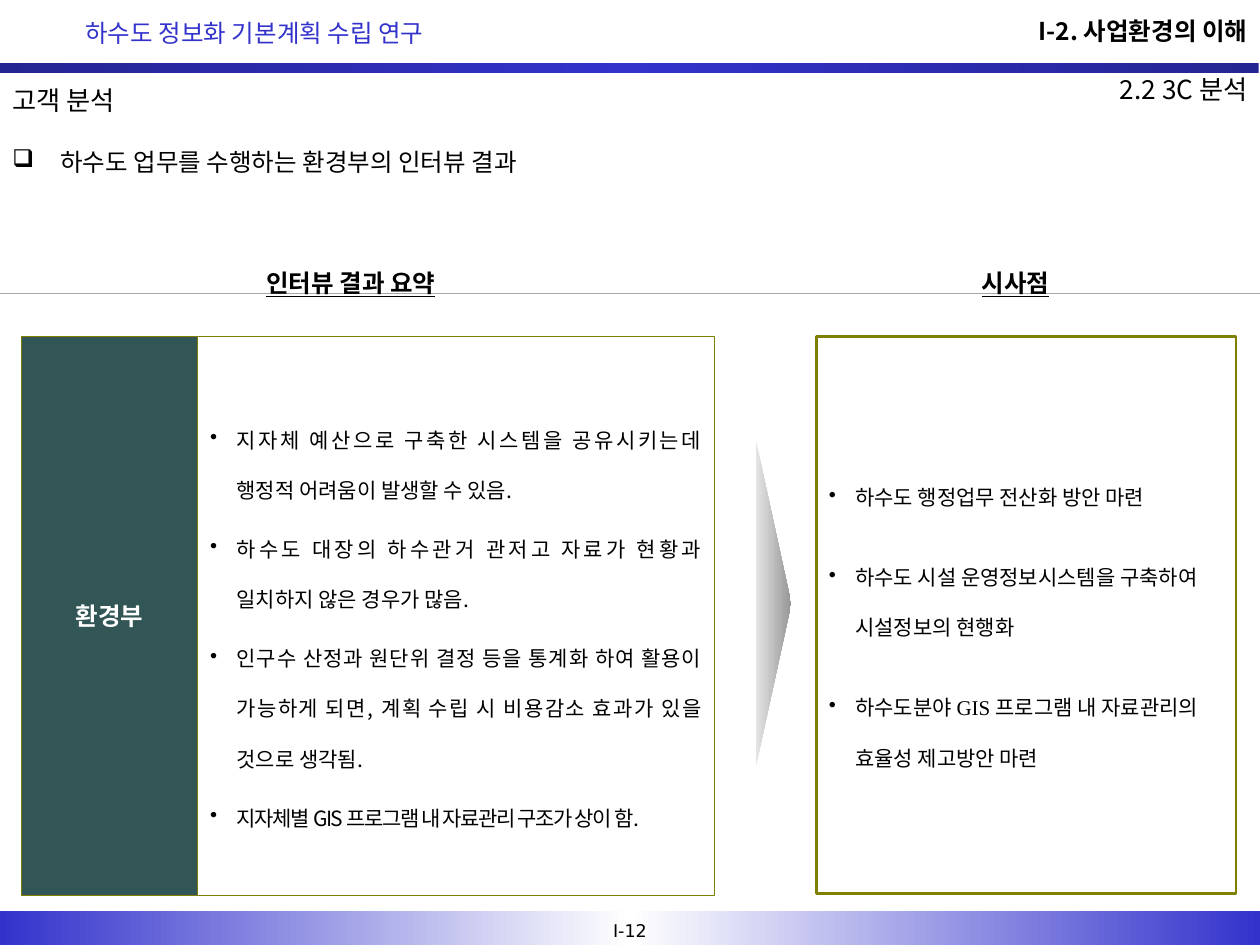
"""Builds the interview summary slide of a sewerage planning study."""
from dataclasses import dataclass
from typing import Any, NamedTuple, Optional

from lxml.etree import SubElement
from pptx import Presentation
from pptx.dml.color import RGBColor
from pptx.enum.dml import MSO_LINE
from pptx.enum.shapes import MSO_CONNECTOR, MSO_SHAPE as SHAPE
from pptx.enum.text import MSO_ANCHOR as ANCHOR, MSO_AUTO_SIZE, PP_ALIGN as ALIGN
from pptx.oxml.ns import qn
from pptx.util import Inches, Pt

COLORS = {"black": "000000", "white": "FFFFFF", "blue": "3333CC", "navy": "242492",
          "olive": "808000", "teal": "325656", "rule": "A6A6A6",
          "silver": "E5E5E5", "gray": "969696"}
KR, LATIN, SERIF = "Noto Sans CJK KR", "DejaVu Sans", "Times New Roman"
WIDTH, HEIGHT = Inches(10), Inches(7.5)
COLS, ROWS = 100, 75


class Area(NamedTuple):
    """A rectangle in columns and rows of the slide grid."""
    col: float
    row: float
    cols: float
    rows: float

    def emu(self) -> tuple:
        """Return left, top, width and height in slide units."""
        return tuple(round(v * side / n) for v, side, n in
                     zip(self, (WIDTH, HEIGHT) * 2, (COLS, ROWS) * 2))


@dataclass
class Style:
    """The format shared by all paragraphs of a text."""
    size: float = 14
    color: str = "black"
    font: str = KR
    bold: bool = False
    underline: bool = False
    align: Any = ALIGN.LEFT
    anchor: Any = ANCHOR.MIDDLE
    wrap: bool = True
    bullet: Optional[str] = None
    indent: float = 0
    line: float = 1.0
    gap: float = 0


@dataclass
class Label:
    """A text box with one paragraph."""
    area: Area
    text: str
    style: Style


@dataclass
class Panel:
    """A framed rectangle with paragraphs."""
    area: Area
    texts: list
    style: Style
    fill: str = "white"
    weight: float = 0.75


@dataclass
class Blend:
    """A shape filled with evenly spaced gradient colours."""
    area: Area
    colors: list
    shape: Any = SHAPE.RECTANGLE
    rotation: float = 0


def rgb(name: str) -> RGBColor:
    """Look up a named colour."""
    return RGBColor.from_string(COLORS[name])


def assign(target: Any, **values: Any) -> None:
    """Set attributes from format values."""
    for name, value in values.items():
        setattr(target, name, value)


def write(tf: Any, texts: list, style: Style) -> None:
    """Fill a text frame with styled paragraphs."""
    assign(tf, word_wrap=style.wrap, auto_size=MSO_AUTO_SIZE.NONE,
           vertical_anchor=style.anchor)
    last = len(texts) - 1
    for i, text in enumerate(texts):
        p = tf.add_paragraph() if i else tf.paragraphs[0]
        if style.bullet:
            pPr = p._p.get_or_add_pPr()
            pPr.set("marL", str(Inches(style.indent)))
            pPr.set("indent", str(-Inches(style.indent)))
            SubElement(pPr, qn("a:buChar"), char=style.bullet)
        assign(p, alignment=style.align, line_spacing=style.line,
               space_before=Pt(style.gap if i else 0),
               space_after=Pt(style.gap if i < last else 0))
        r = p.add_run()
        r.text = text
        assign(r.font, size=Pt(style.size), bold=style.bold,
               underline=style.underline, name=style.font)
        r.font.color.rgb = rgb(style.color)
        SubElement(r._r.get_or_add_rPr(), qn("a:ea"), typeface=KR)


def add_label(s: Any, label: Label) -> None:
    """Draw a text box."""
    write(s.shapes.add_textbox(*label.area.emu()).text_frame, [label.text], label.style)


def add_panel(s: Any, panel: Panel) -> Any:
    """Draw a framed panel and return it."""
    sp = s.shapes.add_shape(SHAPE.RECTANGLE, *panel.area.emu())
    sp.shadow.inherit = False
    sp.fill.solid()
    sp.fill.fore_color.rgb = rgb(panel.fill)
    sp.line.color.rgb = rgb("olive")
    sp.line.width = Pt(panel.weight)
    write(sp.text_frame, panel.texts, panel.style)
    return sp


def add_blend(s: Any, blend: Blend) -> None:
    """Draw a shape with a horizontal gradient."""
    sp = s.shapes.add_shape(blend.shape, *blend.area.emu())
    sp.shadow.inherit = False
    sp.rotation = blend.rotation
    sp.line.fill.background()
    sp.fill.gradient()
    sp.fill.gradient_angle = 0
    grad = sp._element.spPr.find(qn("a:gradFill"))
    grad.set("rotWithShape", "0")
    stops = grad.find(qn("a:gsLst"))
    stops[:] = []
    for i, name in enumerate(blend.colors):
        gs = SubElement(stops, qn("a:gs"), pos=str(100000 * i // (len(blend.colors) - 1)))
        SubElement(gs, qn("a:srgbClr"), val=COLORS[name])


def add_rule(s: Any, row: float) -> None:
    """Draw a dotted rule across the slide."""
    left, top, width, _ = Area(0, row, COLS, 0).emu()
    sp = s.shapes.add_connector(MSO_CONNECTOR.STRAIGHT, left, top, width, top)
    assign(sp.line, width=Pt(0.25), dash_style=MSO_LINE.ROUND_DOT)
    sp.line.color.rgb = rgb("rule")
    SubElement(sp._element.spPr, qn("a:effectLst"))


HEAD = dict(bold=True, wrap=False, anchor=ANCHOR.TOP)
COLUMN = Style(underline=True, align=ALIGN.CENTER, **HEAD)
POINTS = dict(size=12, bullet="•", indent=0.21, line=2.0)

BLENDS = [
    Blend(Area(-0.1, 5, COLS, 0.8), ["navy", "blue", "navy"]),
    Blend(Area(0, 72.3, COLS, 2.7), ["blue", "white", "blue"]),
    Blend(Area(48.5, 46.5, 25.8, 2.8), ["silver", "gray"], SHAPE.ISOSCELES_TRIANGLE, 90),
]
LABELS = [
    Label(Area(47.2, 72.5, 5.6, 2.7), "I-12",
          Style(size=10, font=LATIN, align=ALIGN.CENTER, wrap=False)),
    Label(Area(5.8, 0.7, 50, 3.6), "하수도 정보화 기본계획 수립 연구", Style(color="blue", line=1.1)),
    Label(Area(78.8, 0.8, 21.2, 3.3), "I-2. 사업환경의 이해", Style(align=ALIGN.RIGHT, **HEAD)),
    Label(Area(0, 10.8, 99.2, 3.7), "하수도 업무를 수행하는 환경부의 인터뷰 결과",
          Style(anchor=ANCHOR.TOP, bullet="❑", indent=0.38, line=1.15)),
    Label(Area(19.4, 20.8, 16.9, 3.3), "인터뷰 결과 요약", COLUMN),
    Label(Area(76.7, 20.8, 7.8, 3.3), "시사점", COLUMN),
    Label(Area(17.5, 5, 82.5, 4.2), "2.2 3C 분석", Style(size=15, align=ALIGN.RIGHT)),
]
SUMMARY = Panel(Area(15.7, 26.7, 41, 44.4), [
    "지자체 예산으로 구축한 시스템을 공유시키는데 행정적 어려움이 발생할 수 있음.",
    "하수도 대장의 하수관거 관저고 자료가 현황과 일치하지 않은 경우가 많음.",
    "인구수 산정과 원단위 결정 등을 통계화 하여 활용이 가능하게 되면, "
    "계획 수립 시 비용감소 효과가 있을 것으로 생각됨.",
    "지자체별 GIS 프로그램 내 자료관리 구조가 상이 함.",
], Style(align=ALIGN.JUSTIFY, gap=2.4, **POINTS))
FINDINGS = Panel(Area(64.8, 26.7, 33.3, 44.2), [
    "하수도 행정업무 전산화 방안 마련",
    "하수도 시설 운영정보시스템을 구축하여 시설정보의 현행화",
    "하수도분야 GIS 프로그램 내 자료관리의 효율성 제고방안 마련",
], Style(font=SERIF, gap=8.4, **POINTS), weight=1.5)
MINISTRY = Panel(Area(1.7, 26.7, 14, 44.4), ["환경부"],
                 Style(color="white", bold=True, align=ALIGN.CENTER, wrap=False), "teal")


def main() -> None:
    """Build and save the slide."""
    prs = Presentation()
    assign(prs, slide_width=WIDTH, slide_height=HEIGHT)
    s = prs.slides.add_slide(prs.slide_layouts[5])
    title = s.shapes.title
    assign(title, **dict(zip(("left", "top", "width", "height"), Area(0, 5.8, 46.8, 4.2).emu())))
    write(title.text_frame, ["고객 분석"], Style(size=15))
    add_rule(s, 23.3)
    for blend in BLENDS:
        add_blend(s, blend)
    for label in LABELS:
        add_label(s, label)
    summary, _, _ = [add_panel(s, panel) for panel in (SUMMARY, FINDINGS, MINISTRY)]
    summary.text_frame.paragraphs[-1].runs[0]._r.get_or_add_rPr().set("spc", "-80")
    prs.save("out.pptx")


if __name__ == "__main__":
    main()
